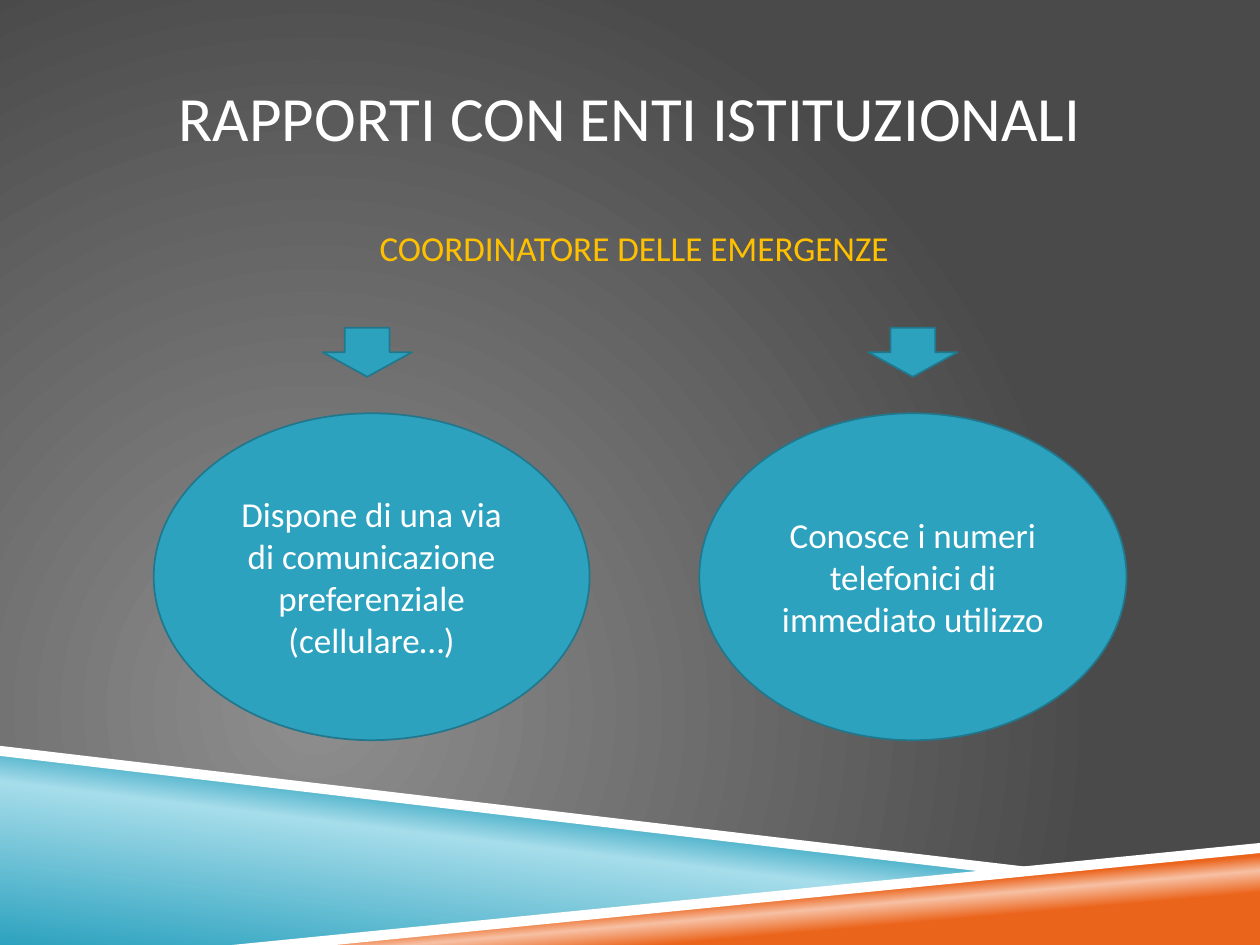
from lxml.etree import SubElement
from pptx import Presentation
from pptx.dml.color import RGBColor
from pptx.enum.shapes import MSO_SHAPE
from pptx.enum.text import MSO_ANCHOR, PP_ALIGN
from pptx.oxml.ns import qn
from pptx.util import Inches, Pt

COLORS = {
    "white": "FFFFFF", "gold": "FFC000",
    "teal": "2DA2BF", "pale_teal": "A6DDEA", "dark_teal": "21788D",
    "orange": "EB641B", "pale_orange": "F7C1A4",
    "light_gray": "8E8E8E", "dark_gray": "4A4A4A",
}
RGB = {name: RGBColor.from_string(value) for name, value in COLORS.items()}

presentation = Presentation()
presentation.slide_width, presentation.slide_height = Inches(10), Inches(7.5)
COLUMN = presentation.slide_width / 100
ROW = presentation.slide_height / 100
slide = presentation.slides.add_slide(presentation.slide_layouts[6])


def set_gradient(fill, owner, stops, angle=None):
    fill.gradient()
    gradient = next(owner.iter(qn("a:gradFill")))
    for child in list(gradient):
        gradient.remove(child)
    stop_list = SubElement(gradient, qn("a:gsLst"))
    for position, color in stops:
        stop = SubElement(stop_list, qn("a:gs"), pos=str(position * 1000))
        SubElement(stop, qn("a:srgbClr"), val=COLORS[color])
    if angle is None:
        circle = SubElement(gradient, qn("a:path"), path="circle")
        SubElement(circle, qn("a:fillToRect"), l="50000", t="100000", r="100000", b="50000")
    else:
        SubElement(gradient, qn("a:lin"), ang=str(angle * 60000), scaled="0")


def write_text(shape, text, size, color, anchor):
    frame = shape.text_frame
    frame.word_wrap = True
    frame.vertical_anchor = anchor
    paragraph = frame.paragraphs[0]
    paragraph.alignment = PP_ALIGN.CENTER
    run = paragraph.add_run()
    run.text = text
    run.font.name = "Calibri"
    run.font.size = Pt(size)
    run.font.color.rgb = RGB[color]


set_gradient(slide.background.fill, slide.element, [(0, "light_gray"), (100, "dark_gray")])

bands = [
    ([(0, 79.6), (79.2, 92.27), (20, 100), (0, 100)],
     [(0, "teal"), (52, "pale_teal"), (66, "teal")], 277),
    ([(19.8, 100), (100, 89.6), (100, 100)],
     [(28, "orange"), (40, "pale_orange"), (48, "orange")], 265),
    ([(0, 78.93), (0, 80), (79, 92.4), (83.2, 92)], None, None),
    ([(100, 89.2), (18.4, 100), (26.6, 100), (100, 90.27)], None, None),
]
for corners, stops, angle in bands:
    points = [(round(x * COLUMN), round(y * ROW)) for x, y in corners]
    builder = slide.shapes.build_freeform(*points[0])
    builder.add_line_segments(points[1:], close=True)
    band = builder.convert_to_shape()
    band.shadow.inherit = False
    band.line.fill.background()
    if stops:
        set_gradient(band.fill, band.element.spPr, stops, angle)
    else:
        band.fill.solid()
        band.fill.fore_color.rgb = RGB["white"]

headings = [
    ("RAPPORTI CON ENTI ISTITUZIONALI", 4, 16.67, 36, "white", MSO_ANCHOR.MIDDLE, 0),
    ("COORDINATORE DELLE EMERGENZE", 23.33, 54.4, 20, "gold", MSO_ANCHOR.TOP, 0.07),
]
for text, top, height, size, color, anchor, indent in headings:
    heading = slide.shapes.add_textbox(
        round(7.5 * COLUMN), round(top * ROW), round(85 * COLUMN), round(height * ROW))
    heading.text_frame.margin_left = Inches(indent)
    heading.text_frame.margin_right = 0
    write_text(heading, text, size, color, anchor)

duties = [
    (25.6, 12.2, 34.6, "Dispone di una via di comunicazione preferenziale (cellulare…)"),
    (68.9, 55.5, 33.9, "Conosce i numeri telefonici di immediato utilizzo"),
]
for arrow_left, oval_left, oval_width, text in duties:
    parts = [
        (MSO_SHAPE.DOWN_ARROW, arrow_left, 34.67, 7.1, 5.2, None),
        (MSO_SHAPE.OVAL, oval_left, 43.73, oval_width, 34.6, text),
    ]
    for kind, left, top, width, height, label in parts:
        shape = slide.shapes.add_shape(
            kind, round(left * COLUMN), round(top * ROW),
            round(width * COLUMN), round(height * ROW))
        shape.shadow.inherit = False
        shape.fill.solid()
        shape.fill.fore_color.rgb = RGB["teal"]
        shape.line.color.rgb = RGB["dark_teal"]
        shape.line.width = Pt(1)
        if label:
            write_text(shape, label, 20, "white", MSO_ANCHOR.MIDDLE)

presentation.save("out.pptx")
